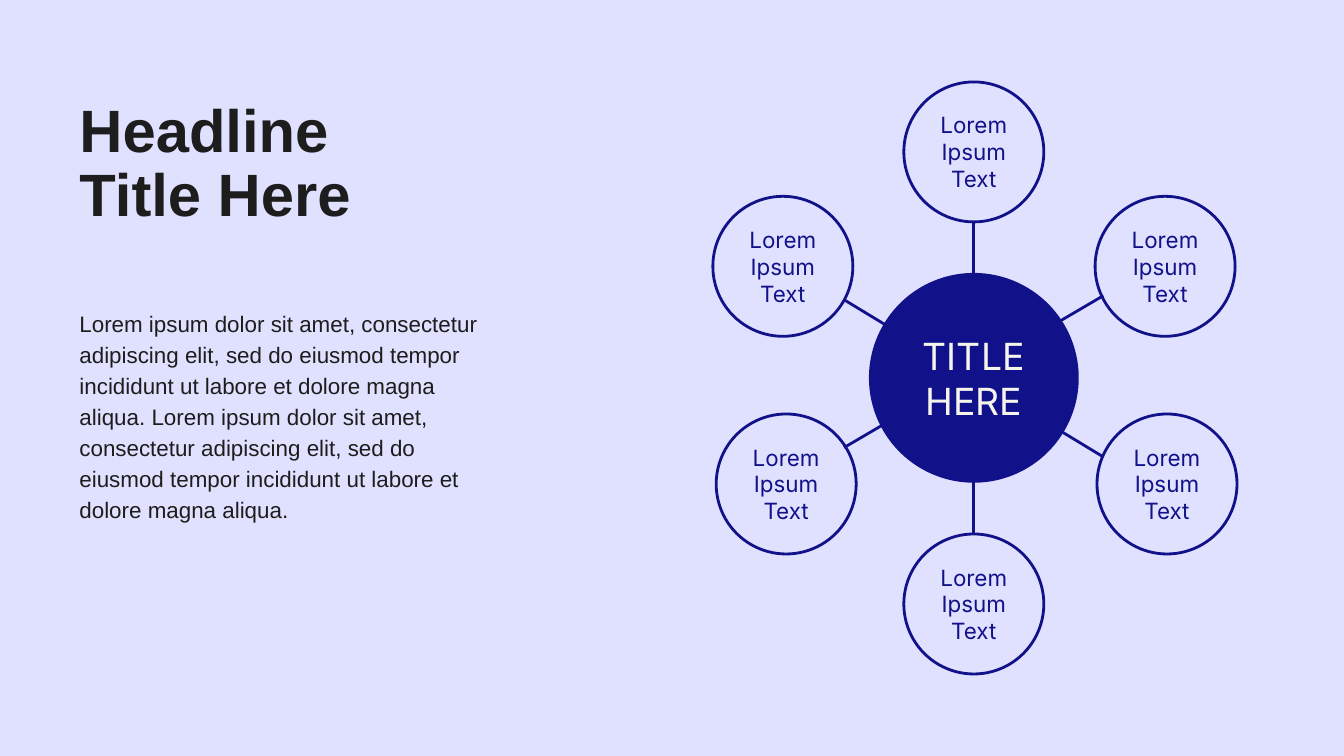
from dataclasses import dataclass

from lxml import etree
from pptx import Presentation
from pptx import util as u
from pptx.dml.color import RGBColor
from pptx.enum import shapes, text
from pptx.oxml import ns

LAVENDER = RGBColor(0xE0, 0xE0, 0xFF)
NAVY = RGBColor(0x11, 0x11, 0x89)
INK = RGBColor(0x1D, 0x1D, 0x1D)
CREAM = RGBColor(0xF6, 0xF5, 0xEC)
LOREM = ("Lorem ipsum dolor sit amet, consectetur adipiscing elit, sed do eiusmod "
         "tempor incididunt ut labore et dolore magna aliqua.")


@dataclass(frozen=True)
class Style:
    font: str
    size: float
    color: RGBColor
    bold: bool = False
    spacing: float = 1.0
    align: text.PP_ALIGN = text.PP_ALIGN.LEFT
    anchor: text.MSO_ANCHOR = text.MSO_ANCHOR.TOP


@dataclass(frozen=True)
class Block:
    left: float
    top: float
    width: float
    height: float
    lines: tuple[str, ...]
    style: Style


@dataclass(frozen=True)
class Circle:
    x: float
    y: float
    size: float
    lines: tuple[str, ...]
    style: Style
    filled: bool = False


@dataclass(frozen=True)
class Spoke:
    x1: float
    y1: float
    x2: float
    y2: float


CENTER = text.PP_ALIGN.CENTER
MIDDLE = text.MSO_ANCHOR.MIDDLE
HEADLINE = Style("Arial", 32, INK, bold=True, spacing=0.9)
BODY = Style("Arial", 12, INK, spacing=1.15)
HUB_TEXT = Style("Inter", 20, CREAM, align=CENTER, anchor=MIDDLE)
NODE_TEXT = Style("Inter", 12, NAVY, align=CENTER, anchor=MIDDLE)

BLOCKS = (
    Block(35.5, 46.8, 311, 103.7, ("Headline", "Title Here"), HEADLINE),
    Block(35.5, 157, 233.3, 135.4, (f"{LOREM} {LOREM}",), BODY),
)
SPOKES = (
    Spoke(452.2, 239.8, 591.1, 158.4),
    Spoke(591.1, 244.8, 452.2, 160.6),
    Spoke(521.7, 285.8, 521.7, 118.8),
)
HUB = Circle(521.7, 202.4, 112.4, ("TITLE", "HERE"), HUB_TEXT, filled=True)
NODE_CENTERS = (
    (624.2, 142.7), (419.4, 142.7), (521.7, 81.4),
    (421.2, 259.3), (625.2, 259.3), (521.7, 323.6),
)
NODES = tuple(Circle(x, y, 75, ("Lorem", "Ipsum", "Text"), NODE_TEXT)
              for x, y in NODE_CENTERS)


def write(tf, lines: tuple[str, ...], style: Style) -> None:
    tf.word_wrap = True
    tf.vertical_anchor = style.anchor
    tf.margin_left = tf.margin_right = tf.margin_top = tf.margin_bottom = u.Pt(7.2)
    for i, line in enumerate(lines):
        p = tf.paragraphs[0] if i == 0 else tf.add_paragraph()
        p.alignment = style.align
        p.line_spacing = style.spacing
        r = p.add_run()
        r.text = line
        r.font.name = style.font
        r.font.size = u.Pt(style.size)
        r.font.bold = style.bold
        r.font.color.rgb = style.color


def draw_block(s, block: Block) -> None:
    sp = s.shapes.add_textbox(u.Pt(block.left), u.Pt(block.top),
                              u.Pt(block.width), u.Pt(block.height))
    write(sp.text_frame, block.lines, block.style)


def draw_spoke(s, spoke: Spoke) -> None:
    cx = s.shapes.add_connector(shapes.MSO_CONNECTOR.STRAIGHT,
                                u.Pt(spoke.x1), u.Pt(spoke.y1),
                                u.Pt(spoke.x2), u.Pt(spoke.y2))
    cx.line.color.rgb = NAVY
    cx.line.width = u.Pt(1.5)
    etree.SubElement(cx.element.spPr, ns.qn("a:effectLst"))


def draw_circle(s, circle: Circle) -> None:
    half = circle.size / 2
    sp = s.shapes.add_shape(shapes.MSO_SHAPE.ROUNDED_RECTANGLE,
                            u.Pt(circle.x - half), u.Pt(circle.y - half),
                            u.Pt(circle.size), u.Pt(circle.size))
    sp.adjustments[0] = 0.5
    sp.shadow.inherit = False
    if circle.filled:
        sp.fill.solid()
        sp.fill.fore_color.rgb = NAVY
        sp.line.fill.background()
    else:
        sp.fill.background()
        sp.line.color.rgb = NAVY
        sp.line.width = u.Pt(1.5)
    write(sp.text_frame, circle.lines, circle.style)


def main() -> None:
    prs = Presentation()
    prs.slide_width, prs.slide_height = u.Pt(720), u.Pt(405)
    s = prs.slides.add_slide(prs.slide_layouts[6])
    s.background.fill.solid()
    s.background.fill.fore_color.rgb = LAVENDER
    for block in BLOCKS:
        draw_block(s, block)
    for spoke in SPOKES:
        draw_spoke(s, spoke)
    for circle in (HUB, *NODES):
        draw_circle(s, circle)
    prs.save("out.pptx")


if __name__ == "__main__":
    main()
